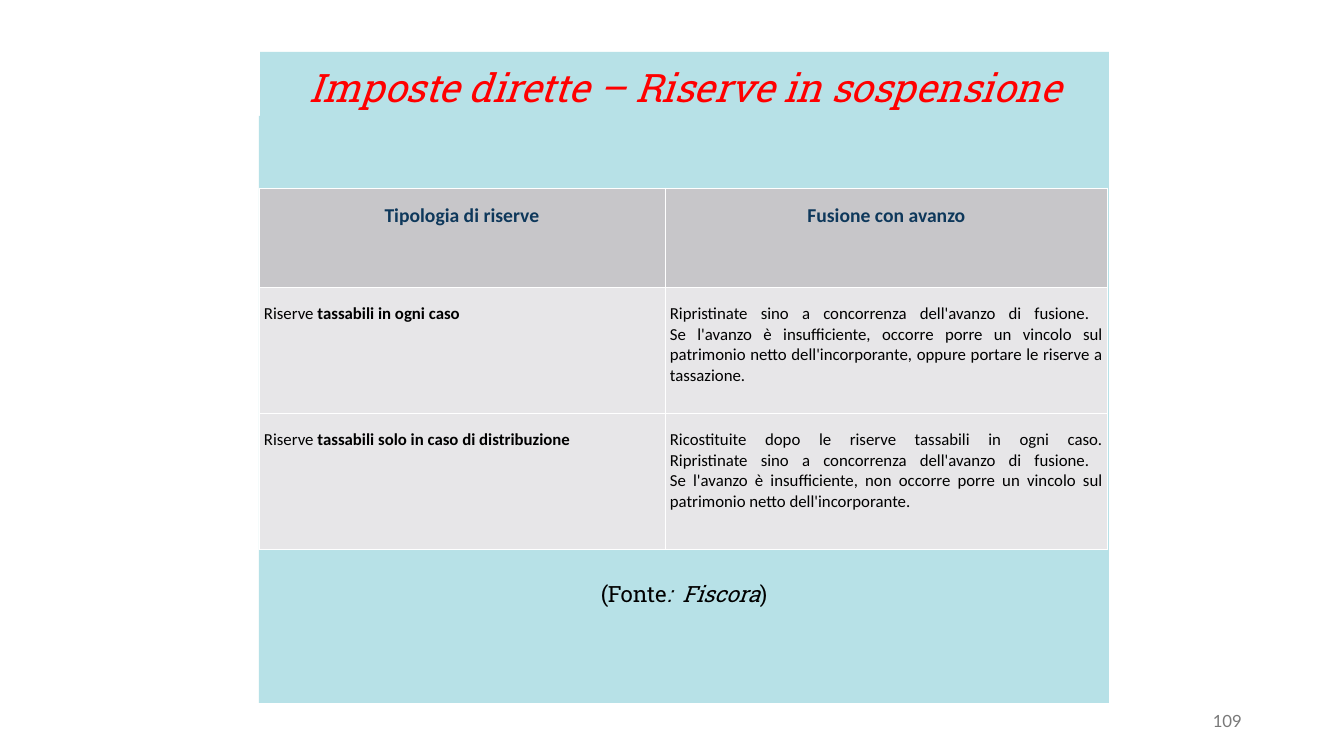
from lxml import etree
from pptx import Presentation
from pptx.dml.color import RGBColor
from pptx.enum.shapes import MSO_SHAPE
from pptx.enum.text import MSO_ANCHOR, MSO_AUTO_SIZE, PP_ALIGN
from pptx.oxml.ns import qn
from pptx.util import Emu, Pt

RECT = MSO_SHAPE.RECTANGLE
TOP, MIDDLE, BOTTOM = MSO_ANCHOR.TOP, MSO_ANCHOR.MIDDLE, MSO_ANCHOR.BOTTOM
LEFT, CENTER, RIGHT = PP_ALIGN.LEFT, PP_ALIGN.CENTER, PP_ALIGN.RIGHT
JUSTIFY = PP_ALIGN.JUSTIFY
NO_FIT = MSO_AUTO_SIZE.NONE

SERIF, SANS = "Roboto Slab", "Calibri"
AQUA, WHITE, BLACK = "B7E1E7", "FFFFFF", "000000"

HEADS = ["Tipologia di riserve", "Fusione con avanzo"]
# Each row: plain start, bold end, lines of the outcome
ROWS = [
    ("Riserve ", "tassabili in ogni caso",
     ["Ripristinate sino a concorrenza dell'avanzo di fusione. ",
      "Se l'avanzo è insufficiente, occorre porre un vincolo sul patrimonio "
      "netto dell'incorporante, oppure portare le riserve a tassazione."]),
    ("Riserve ", "tassabili solo in caso di distribuzione",
     ["Ricostituite dopo le riserve tassabili in ogni caso.",
      "Ripristinate sino a concorrenza dell'avanzo di fusione. ",
      "Se l'avanzo è insufficiente, non occorre porre un vincolo sul "
      "patrimonio netto dell'incorporante."]),
]


def px(n):
    return Emu(round(n * 914400 / 100.8))


def rgb(code):
    return RGBColor.from_string(code)


def paint(item, code):
    item.fill.solid()
    item.fill.fore_color.rgb = rgb(code)


def write(para, text, size=12, font=SANS, color=BLACK, bold=False,
          italic=False, align=LEFT):
    """Add one run to a paragraph."""
    para.alignment = align
    run = para.add_run()
    run.text = text
    face = run.font
    face.name, face.size = font, Pt(size)
    face.bold, face.italic = bold, italic
    face.color.rgb = rgb(color)


def frame(shape, anchor):
    """Set up a text frame and give its first paragraph."""
    body = shape.text_frame
    body.word_wrap = True
    body.auto_size = NO_FIT
    body.vertical_anchor = anchor
    return body.paragraphs[0]


def title(slide, x, y, w, h):
    head = slide.shapes.title
    head.left, head.top, head.width, head.height = map(px, (x, y, w, h))
    paint(head, AQUA)
    para = frame(head, BOTTOM)
    para.line_spacing = 0.9
    write(para, "Imposte dirette – Riserve in sospensione", size=28,
          font=SERIF, color="FF0000", italic=True, align=CENTER)


def panel(slide, x, y, w, h):
    """Aqua panel with the source credit below the table."""
    box = slide.shapes.add_shape(RECT, *map(px, (x, y, w, h)))
    box.shadow.inherit = False
    box.line.fill.background()
    paint(box, AQUA)
    para = frame(box, TOP)
    box.text_frame.margin_top = px(h - 123)
    for text, slant in (("(Fonte", False), (":  Fiscora", True), (")", False)):
        write(para, text, size=16, font=SERIF, italic=slant, align=CENTER)


def edge(cell):
    """Draw thin white borders around a cell."""
    props = cell._tc.get_or_add_tcPr()
    for side in ("a:lnL", "a:lnR", "a:lnT", "a:lnB"):
        line = etree.SubElement(props, qn(side), w=str(Pt(0.75)))
        fill = etree.SubElement(line, qn("a:solidFill"))
        etree.SubElement(fill, qn("a:srgbClr"), val=WHITE)


def style(cell, code):
    edge(cell)
    paint(cell, code)
    cell.margin_left = cell.margin_right = px(5)
    cell.margin_top = cell.margin_bottom = px(16)
    return cell.text_frame.paragraphs[0]


def grid(slide, x, y, cols, rows):
    area = map(px, (x, y, sum(cols), sum(rows)))
    table = slide.shapes.add_table(len(rows), len(cols), *area).table
    for col, wide in zip(table.columns, cols):
        col.width = px(wide)
    for row, high in zip(table.rows, rows):
        row.height = px(high)

    # Header row
    for c, text in enumerate(HEADS):
        write(style(table.cell(0, c), "C7C6C9"), text, size=14,
              color="0E385B", bold=True, align=CENTER)

    # Body rows
    for r, (start, strong, lines) in enumerate(ROWS, 1):
        kind, rule = (style(table.cell(r, c), "E7E6E8") for c in range(2))
        write(kind, start)
        write(kind, strong, bold=True)
        for i, text in enumerate(lines):
            if i:
                rule.add_line_break()
            write(rule, text, align=JUSTIFY)


def number(slide, x, y, w, h):
    box = slide.shapes.add_textbox(*map(px, (x, y, w, h)))
    write(frame(box, MIDDLE), "109", font="Lato", color="797979", align=RIGHT)


def main():
    deck = Presentation()
    deck.slide_width, deck.slide_height = px(1344), px(756)
    slide = deck.slides.add_slide(deck.slide_layouts[5])
    title(slide, 260, 52, 849, 64)
    panel(slide, 259, 116, 850, 587)
    number(slide, 950, 701, 302, 40)
    grid(slide, 259, 188, [406, 443], [100, 126, 136])
    deck.save("out.pptx")


if __name__ == "__main__":
    main()
